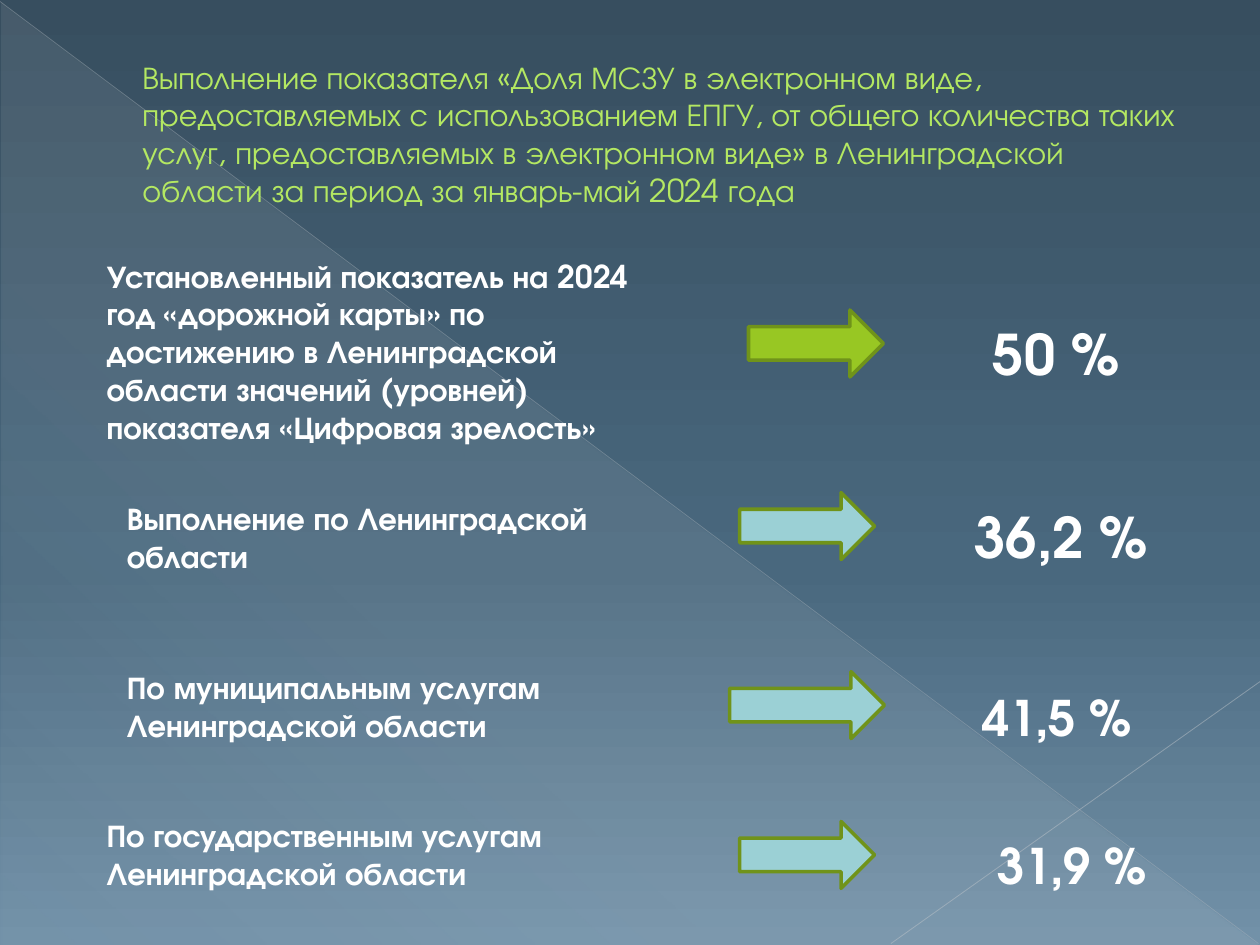
"""Build the slide on the share of electronic services in the region."""
from dataclasses import dataclass

from lxml.etree import SubElement
from pptx import Presentation
from pptx.dml.color import RGBColor
from pptx.enum.shapes import MSO_CONNECTOR, MSO_SHAPE
from pptx.enum.text import MSO_ANCHOR, MSO_AUTO_SIZE, PP_ALIGN
from pptx.oxml import parse_xml
from pptx.oxml.ns import nsdecls, qn
from pptx.util import Cm, Pt


@dataclass(frozen=True)
class Theme:
    font: str = "TeX Gyre Adventor"
    head: str = "B4E862"
    rim: str = "698A18"
    text: str = "FFFFFF"
    goal: str = "98C723"
    fact: str = "9BD0D5"
    edge: str = "70931A"
    long: str = "BAC0C6"
    short: str = "C2C7CC"
    sky: tuple = ((0, "374E5F", 100), (60, "49687E", 100), (100, "7291A8", 100))
    haze: tuple = ((0, "E7ECED", 10), (70, "E7ECED", 8), (100, "E7ECED", 1))
    body: int = 18
    large: int = 32
    mid: int = 28


def shade(part, stops, angle):
    """Set the stops and clockwise angle of a gradient fill."""
    grad = part.find(".//" + qn("a:gradFill"))
    for child in list(grad):
        grad.remove(child)
    group = SubElement(grad, qn("a:gsLst"))
    for place, color, alpha in stops:
        stop = SubElement(group, qn("a:gs"), pos=str(place * 1000))
        tint = SubElement(stop, qn("a:srgbClr"), val=color)
        SubElement(tint, qn("a:alpha"), val=str(alpha * 1000))
    SubElement(grad, qn("a:lin"), ang=str(angle * 60000), scaled="0")


def write(shape, text, size, color, bold, align, frame):
    """Fill a shape with one formatted paragraph."""
    for name, value in frame.items():
        setattr(shape.text_frame, name, value)
    para = shape.text_frame.paragraphs[0]
    para.alignment = align
    run = para.add_run()
    run.text = text
    style = {"name": theme.font, "size": Pt(size), "bold": bold}
    for name, value in style.items():
        setattr(run.font, name, value)
    run.font.color.rgb = RGBColor.from_string(color)


theme = Theme()
deck = Presentation()
deck.slide_width, deck.slide_height = Cm(25.4), Cm(19.05)
slide = deck.slides.add_slide(deck.slide_layouts[5])
shapes = slide.shapes

slide.background.fill.gradient()
shade(slide.element, theme.sky, 90)

haze = shapes.add_shape(
    MSO_SHAPE.RIGHT_TRIANGLE, Cm(0.03), Cm(0.05), Cm(25.35), Cm(19)
)
haze.shadow.inherit = False
haze.line.fill.background()
haze.fill.gradient()
shade(haze.element.spPr, theme.haze, 133)

rays = [
    ((0, 0.03, 25.37, 19.02), theme.long, 0.39, 35),
    ((25.4, 13.74, 17.96, 19.02), theme.short, 0.47, 45),
]
for ends, color, width, alpha in rays:
    ray = shapes.add_connector(MSO_CONNECTOR.STRAIGHT, *map(Cm, ends))
    ray.line.color.rgb = RGBColor.from_string(color)
    ray.line.width = Pt(width)
    tint = ray.element.spPr.find(".//" + qn("a:srgbClr"))
    SubElement(tint, qn("a:alpha"), val=str(alpha * 1000))
    SubElement(ray.element.spPr, qn("a:effectLst"))

title = shapes.title
shapes.element.append(title.element)
place = {"left": 1.27, "top": 0.74, "width": 22.86, "height": 3.89}
for name, value in place.items():
    setattr(title, name, Cm(value))
frame = {
    "word_wrap": True,
    "auto_size": MSO_AUTO_SIZE.NONE,
    "vertical_anchor": MSO_ANCHOR.MIDDLE,
    "margin_left": Cm(1.6),
}
write(
    title,
    "Выполнение показателя «Доля МСЗУ в электронном виде, предоставляемых "
    "с использованием ЕПГУ, от общего количества таких услуг, предоставляемых "
    "в электронном виде» в Ленинградской области за период за январь-май 2024 года",
    theme.body, theme.head, False, PP_ALIGN.LEFT, frame,
)
rim = parse_xml(
    f'<a:ln {nsdecls("a")} w="6350"><a:solidFill>'
    f'<a:srgbClr val="{theme.rim}"/></a:solidFill></a:ln>'
)
title.element.find(".//" + qn("a:rPr")).insert(0, rim)

rows = [
    ("Установленный показатель на 2024 год «дорожной карты» по достижению "
     "в Ленинградской области значений (уровней) показателя «Цифровая зрелость»",
     (1.9, 5.05, 11.99, 4.11), (15.09, 6.25, 2.72, 1.35), theme.goal,
     "50 %", (19.1, 6.32, 4.39, 1.63), theme.large),
    ("Выполнение по Ленинградской области",
     (2.31, 9.93, 10.8, 1.8), (14.91, 9.93, 2.72, 1.35), theme.fact,
     "36,2 %", (19.3, 10.01, 4.19, 1.63), theme.large),
    ("По муниципальным услугам Ленинградской области",
     (2.31, 13.34, 10.8, 1.8), (14.71, 13.54, 3.12, 1.35), theme.fact,
     "41,5 %", (19.51, 13.74, 3.61, 1.45), theme.mid),
    ("По государственным услугам Ленинградской области",
     (1.9, 16.33, 11, 1.8), (14.91, 16.56, 2.72, 1.35), theme.fact,
     "31,9 %", (19.71, 16.71, 3.81, 1.45), theme.mid),
]
frame = {"word_wrap": True, "auto_size": MSO_AUTO_SIZE.SHAPE_TO_FIT_TEXT}
for label, spot, shaft, color, value, cell, size in rows:
    box = shapes.add_textbox(*map(Cm, spot))
    write(box, label, theme.body, theme.text, True, PP_ALIGN.LEFT, frame)

    arrow = shapes.add_shape(MSO_SHAPE.RIGHT_ARROW, *map(Cm, shaft))
    arrow.shadow.inherit = False
    arrow.fill.solid()
    arrow.fill.fore_color.rgb = RGBColor.from_string(color)
    arrow.line.color.rgb = RGBColor.from_string(theme.edge)
    arrow.line.width = Pt(2)

    box = shapes.add_textbox(*map(Cm, cell))
    write(box, value, size, theme.text, True, PP_ALIGN.CENTER, frame)

deck.save("out.pptx")
